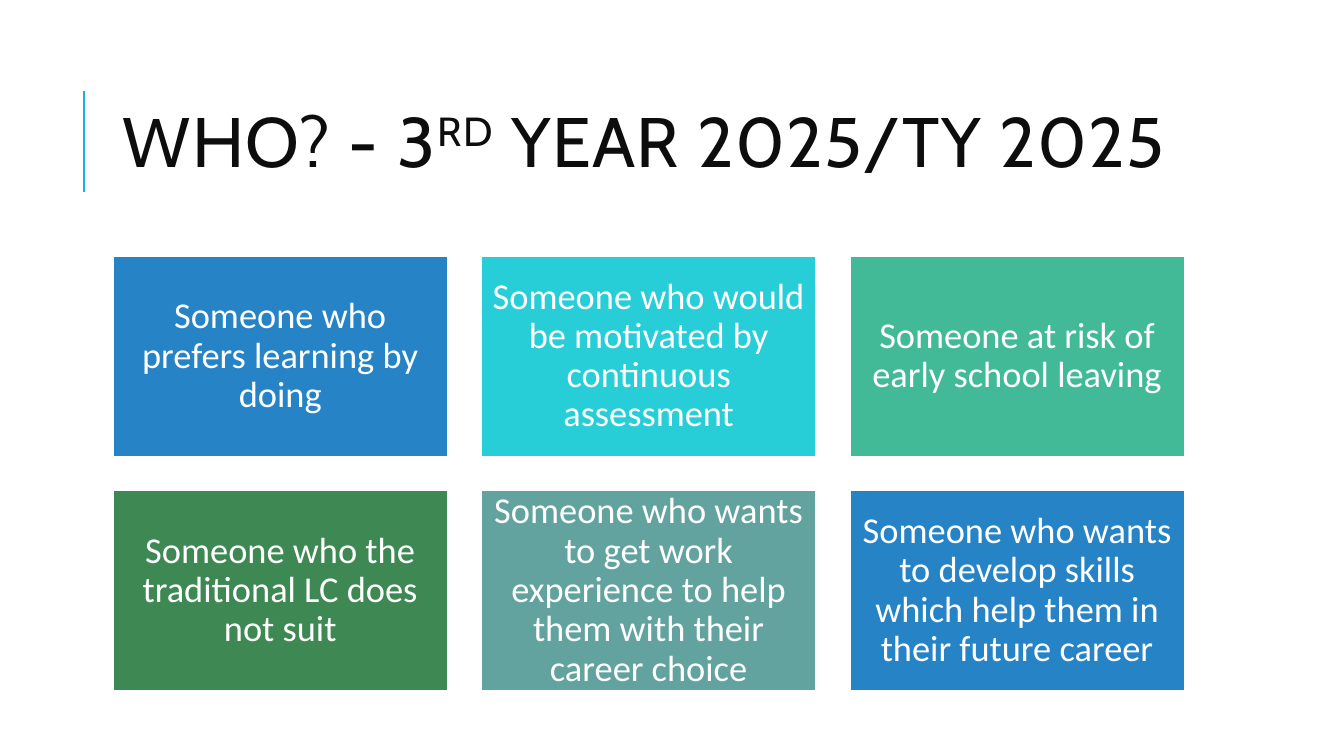
from pptx import Presentation
from pptx.dml.color import RGBColor
from pptx.enum.shapes import MSO_CONNECTOR, MSO_SHAPE
from pptx.enum.text import MSO_ANCHOR, PP_ALIGN
from pptx.oxml.ns import qn
from pptx.util import Pt
from lxml.etree import SubElement

COLORS = {
    "accent": "1CADE4",
    "heading": "0D0D0D",
    "white": "FFFFFF",
    "blue": "2683C6",
    "cyan": "27CED7",
    "mint": "42BA97",
    "green": "3E8853",
    "teal": "62A39F",
}

CANDIDATES = [
    ("Someone who prefers learning by doing", "blue"),
    ("Someone who would be motivated by continuous assessment", "cyan"),
    ("Someone at risk of early school leaving", "mint"),
    ("Someone who the traditional LC does not suit", "green"),
    ("Someone who wants to get work experience to help them with their career choice", "teal"),
    ("Someone who wants to develop skills which help them in their future career", "blue"),
]

HEADING = [("WHO? - 3", 0), ("RD", 30000), (" YEAR 2025/TY 2025", 0)]

COLUMNS = 3
LEFT, TOP = 80.6, 182.7
CARD_WIDTH, CARD_HEIGHT = 239.3, 143.6
GAP = 23.9
CARD_INSET = 7.8


def color(name):
    return RGBColor.from_string(COLORS[name])


def add_run(paragraph, text, font_name, size, color_name):
    run = paragraph.add_run()
    run.text = text
    run.font.name = font_name
    run.font.size = Pt(size)
    run.font.color.rgb = color(color_name)
    return run


def add_accent_rule(slide):
    rule = slide.shapes.add_connector(
        MSO_CONNECTOR.STRAIGHT, Pt(60), Pt(136.8), Pt(60), Pt(64.8)
    )
    rule.line.color.rgb = color("accent")
    rule.line.width = Pt(1.5)
    SubElement(rule._element.spPr, qn("a:effectLst"))


def add_heading(slide):
    heading = slide.shapes.add_textbox(Pt(LEFT), Pt(46), Pt(765.6), Pt(118))
    frame = heading.text_frame
    frame.word_wrap = True
    frame.vertical_anchor = MSO_ANCHOR.MIDDLE
    paragraph = frame.paragraphs[0]
    paragraph.line_spacing = 0.8
    for text, baseline in HEADING:
        run = add_run(paragraph, text, "Cabin", 50, "heading")
        properties = run.font._element
        properties.set("spc", "100")
        properties.set("baseline", str(baseline))


def add_card(slide, index, text, fill_name):
    row, column = divmod(index, COLUMNS)
    card = slide.shapes.add_shape(
        MSO_SHAPE.RECTANGLE,
        Pt(LEFT + column * (CARD_WIDTH + GAP)),
        Pt(TOP + row * (CARD_HEIGHT + GAP)),
        Pt(CARD_WIDTH),
        Pt(CARD_HEIGHT),
    )
    card.shadow.inherit = False
    card.fill.solid()
    card.fill.fore_color.rgb = color(fill_name)
    card.line.color.rgb = color("white")
    card.line.width = Pt(1.25)
    frame = card.text_frame
    frame.word_wrap = True
    frame.vertical_anchor = MSO_ANCHOR.MIDDLE
    frame.margin_left = frame.margin_right = Pt(CARD_INSET)
    frame.margin_top = frame.margin_bottom = Pt(CARD_INSET)
    paragraph = frame.paragraphs[0]
    paragraph.alignment = PP_ALIGN.CENTER
    paragraph.line_spacing = 0.9
    add_run(paragraph, text, "Calibri", 26, "white")


def main():
    presentation = Presentation()
    presentation.slide_width = Pt(960)
    presentation.slide_height = Pt(540)
    slide = presentation.slides.add_slide(presentation.slide_layouts[6])
    add_accent_rule(slide)
    add_heading(slide)
    for index, (text, fill_name) in enumerate(CANDIDATES):
        add_card(slide, index, text, fill_name)
    presentation.save("out.pptx")


if __name__ == "__main__":
    main()
